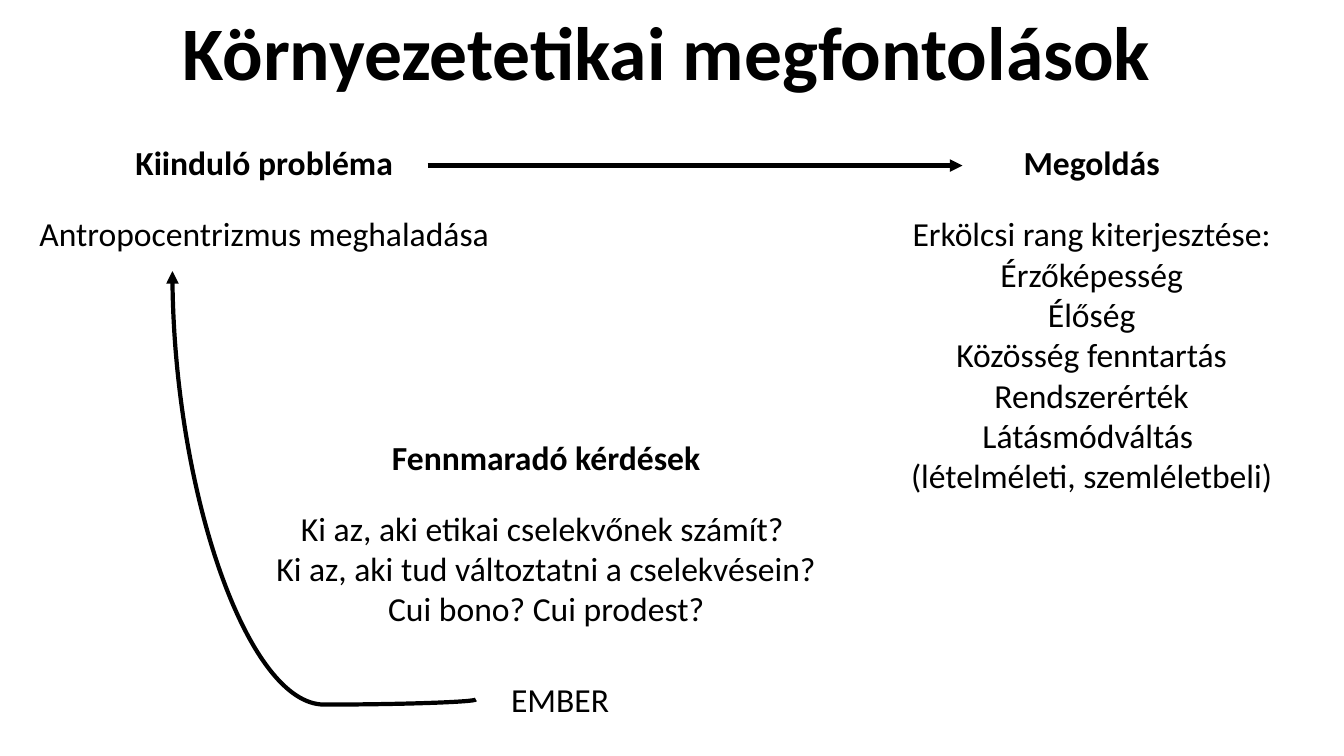
from dataclasses import dataclass

from lxml.etree import SubElement
from pptx import Presentation
from pptx.dml.color import RGBColor
from pptx.enum.shapes import MSO_CONNECTOR
from pptx.enum.text import MSO_ANCHOR, MSO_AUTO_SIZE, PP_ALIGN
from pptx.oxml.ns import qn
from pptx.shapes.connector import Connector
from pptx.slide import Slide
from pptx.text.text import TextFrame
from pptx.util import Pt

BLACK = "000000"
HEADING_GAP = 22


@dataclass
class Topic:
    left: float
    top: float
    width: float
    height: float
    heading: str
    lines: list[str]


@dataclass
class Arrow:
    kind: MSO_CONNECTOR
    begin: tuple[float, float]
    end: tuple[float, float]


TOPICS = [
    Topic(19.5, 98, 338.5, 87, "Kiinduló probléma", ["Antropocentrizmus meghaladása"]),
    Topic(642.25, 98, 275, 262, "Megoldás", [
        "Erkölcsi rang kiterjesztése:",
        "Érzőképesség",
        "Élőség",
        "Közösség fenntartás",
        "Rendszerérték",
        "Látásmódváltás ",
        "(lételméleti, szemléletbeli)",
    ]),
    Topic(188.5, 308.25, 403.25, 145.5, "Fennmaradó kérdések", [
        "Ki az, aki etikai cselekvőnek számít? ",
        "Ki az, aki tud változtatni a cselekvésein?",
        "Cui bono? Cui prodest?",
    ]),
]
SOLUTION_ARROW = Arrow(MSO_CONNECTOR.STRAIGHT, (305.5, 118.25), (687.5, 118.25))
HUMAN_ARROW = Arrow(MSO_CONNECTOR.CURVE, (78.5, 455), (384.5, 238.25))


def color(value: str) -> RGBColor:
    return RGBColor.from_string(value)


def write(frame: TextFrame, text: str, *, size: float = 24, bold: bool = False,
          align: PP_ALIGN = PP_ALIGN.CENTER, space_before: float = 0) -> None:
    paragraph = frame.paragraphs[0] if not frame.text else frame.add_paragraph()
    paragraph.alignment = align
    paragraph.line_spacing = 1.0
    paragraph.space_before = Pt(space_before)
    run = paragraph.add_run()
    run.text = text
    run.font.name = "Calibri"
    run.font.size = Pt(size)
    run.font.bold = bold
    run.font.color.rgb = color(BLACK)


def prepare(frame: TextFrame, wrap: bool = False) -> TextFrame:
    frame.word_wrap = wrap
    frame.auto_size = MSO_AUTO_SIZE.SHAPE_TO_FIT_TEXT
    frame.vertical_anchor = MSO_ANCHOR.TOP
    return frame


def add_title(slide: Slide, text: str) -> None:
    title = slide.shapes.title
    title.left, title.top, title.width, title.height = Pt(123), Pt(0), Pt(713.5), Pt(72.75)
    write(prepare(title.text_frame), text, size=54, bold=True, align=PP_ALIGN.LEFT)


def add_topic(slide: Slide, topic: Topic) -> None:
    shape = slide.shapes.add_textbox(
        Pt(topic.left), Pt(topic.top), Pt(topic.width), Pt(topic.height))
    frame = prepare(shape.text_frame)
    write(frame, topic.heading, bold=True)
    for index, line in enumerate(topic.lines):
        write(frame, line, space_before=0 if index else HEADING_GAP)


def add_arrow(slide: Slide, arrow: Arrow) -> Connector:
    connector = slide.shapes.add_connector(
        arrow.kind, *map(Pt, arrow.begin), *map(Pt, arrow.end))
    connector.line.color.rgb = color(BLACK)
    connector.line.width = Pt(3)
    SubElement(connector.line._get_or_add_ln(), qn("a:tailEnd"), type="triangle")
    SubElement(connector._element.spPr, qn("a:effectLst"))
    return connector


def turn_upward(connector: Connector, bend: int) -> None:
    properties = connector._element.spPr
    properties.find(qn("a:xfrm")).set("rot", str(270 * 60000))
    geometry = properties.find(qn("a:prstGeom"))
    adjustments = geometry.find(qn("a:avLst"))
    if adjustments is None:
        adjustments = SubElement(geometry, qn("a:avLst"))
    SubElement(adjustments, qn("a:gd"), name="adj1", fmla=f"val {bend}")


def main() -> None:
    presentation = Presentation()
    presentation.slide_width, presentation.slide_height = Pt(960), Pt(540)
    slide = presentation.slides.add_slide(presentation.slide_layouts[5])
    add_title(slide, "Környezetetikai megfontolások")
    for topic in TOPICS:
        add_topic(slide, topic)
    add_arrow(slide, SOLUTION_ARROW)
    turn_upward(add_arrow(slide, HUMAN_ARROW), bend=-1200)
    human = slide.shapes.add_textbox(Pt(358), Pt(481.75), Pt(103.75), Pt(36))
    write(prepare(human.text_frame, wrap=True), "EMBER", align=PP_ALIGN.LEFT)
    presentation.save("out.pptx")


if __name__ == "__main__":
    main()
